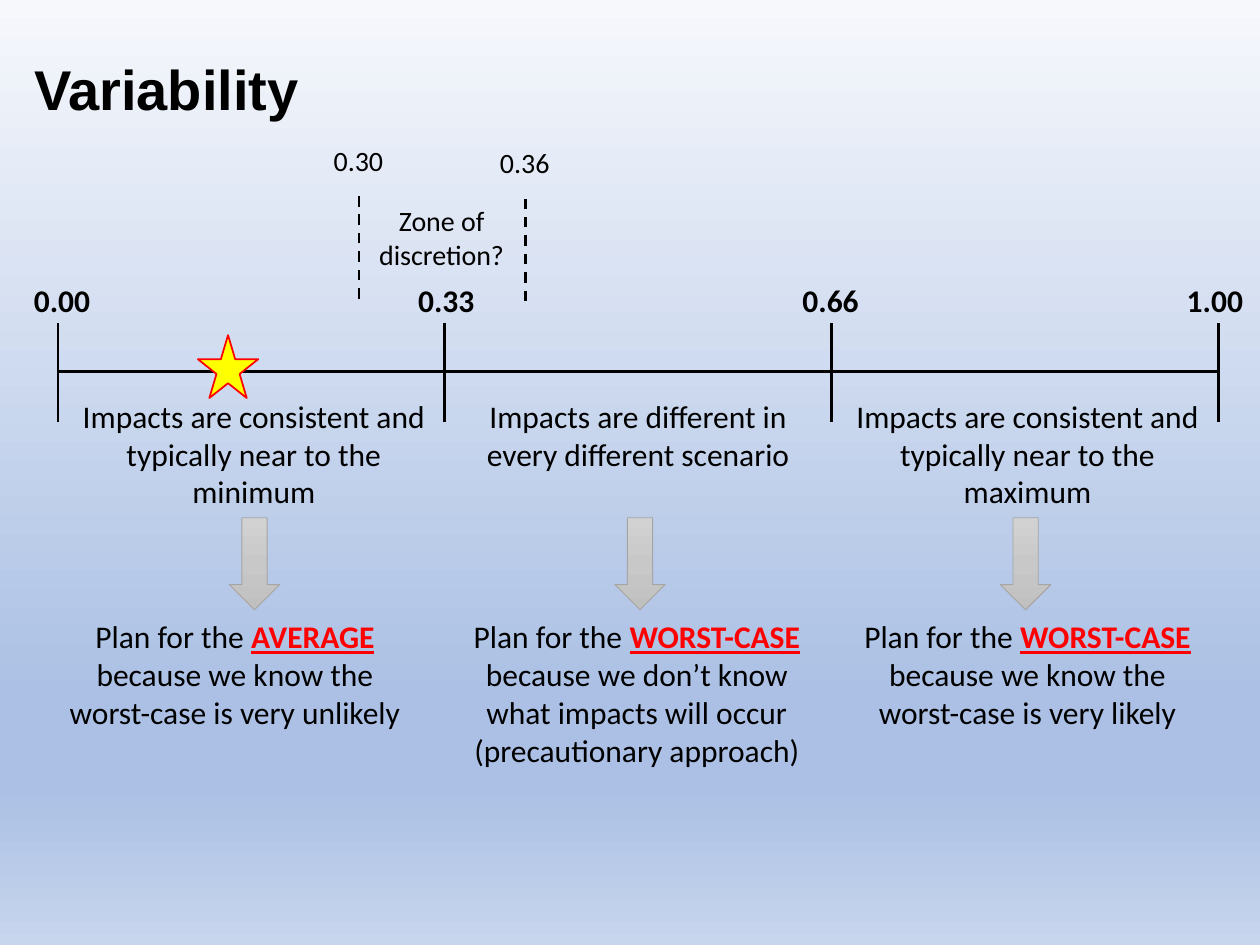
from lxml.etree import SubElement
from pptx import Presentation
from pptx.dml.color import RGBColor
from pptx.enum.dml import MSO_LINE
from pptx.enum.shapes import MSO_CONNECTOR, MSO_SHAPE
from pptx.enum.text import MSO_ANCHOR, PP_ALIGN
from pptx.oxml.ns import qn
from pptx.util import Inches, Pt

BLACK, RED, YELLOW, GREY = "000000", "FF0000", "FFFF00", "A5A5A5"
BACKGROUND = [(0, "F6F8FC"), (74, "ABC0E4"), (83, "ABC0E4"), (100, "C7D5ED")]
ARROW_FILL = [(0, "D2D2D2"), (50, "C8C8C8"), (100, "C0C0C0")]

# Content
TITLE = "Variability"
SCALE = ["0.00", "0.33", "0.66", "1.00"]
ZONE = "Zone of discretion?"
ZONE_LIMITS = [("0.30", 2.85, 1.09), ("0.36", 4.17, 1.11)]  # label, centre, top
# Each zone: impact and its left and width, plan paragraphs of (text, emphasis) and their left
ZONES = [
    ("Impacts are consistent and typically near to the minimum", 0.5, 3.03,
     [[("Plan for the ", False), ("AVERAGE", True),
       (" because we know the worst-case is very unlikely", False)]], 0.35),
    ("Impacts are different in every different scenario", 3.53, 3.07,
     [[("Plan for the ", False), ("WORST-CASE", True),
       (" because we don’t know what impacts will occur", False)],
      [("(precautionary approach)", False)]], 3.54),
    ("Impacts are consistent and typically near to the maximum", 6.64, 3.03,
     [[("Plan for the ", False), ("WORST-CASE", True),
       (" because we know the worst-case is very likely", False)]], 6.64),
]

# Scale geometry, in inches
AXIS_LEFT, AXIS_STEP, AXIS_Y = 0.46, 3.07, 2.95
TICK_TOP, TICK_BOTTOM = 2.56, 3.35
LABEL_LEFT, LABEL_STEP = 0.17, 3.05
ARROW_LEFT, ARROW_STEP = 1.82, 3.06


def rgb(value):
    return RGBColor.from_string(value)


def set_gradient(fill, element, stops):
    fill.gradient()
    fill.gradient_angle = 270
    stop_list = next(element.iter(qn("a:gsLst")))
    for old_stop in list(stop_list):
        stop_list.remove(old_stop)
    for position, color in stops:
        stop = SubElement(stop_list, qn("a:gs"), pos=str(position * 1000))
        SubElement(stop, qn("a:srgbClr"), val=color)


def format_run(run, size, name="Calibri", bold=False, color=BLACK):
    run.font.size, run.font.name, run.font.bold = Pt(size), name, bold
    run.font.color.rgb = rgb(color)


def add_text(slide, left, top, width, height, paragraphs, size=18,
             bold=False, align=PP_ALIGN.CENTER, wrap=True):
    box = slide.shapes.add_textbox(*map(Inches, (left, top, width, height)))
    frame = box.text_frame
    frame.word_wrap = wrap
    for index, parts in enumerate(paragraphs):
        paragraph = frame.add_paragraph() if index else frame.paragraphs[0]
        paragraph.alignment = align
        for text, emphasis in parts:
            run = paragraph.add_run()
            run.text = text
            format_run(run, size, bold=bold or emphasis, color=RED if emphasis else BLACK)
            run.font.underline = emphasis


def add_line(slide, x1, y1, x2, y2, dash=None):
    line = slide.shapes.add_connector(MSO_CONNECTOR.STRAIGHT,
                                      *map(Inches, (x1, y1, x2, y2)))
    line.line.color.rgb = rgb(BLACK)
    line.line.width = Pt(1.5)
    if dash:
        line.line.dash_style = dash
    SubElement(line._element.spPr, qn("a:effectLst"))


def add_shape(slide, kind, left, top, width, height, color, line_width):
    shape = slide.shapes.add_shape(kind, *map(Inches, (left, top, width, height)))
    shape.shadow.inherit = False
    shape.line.color.rgb = rgb(color)
    shape.line.width = Pt(line_width)
    return shape


def main():
    presentation = Presentation()
    presentation.slide_width, presentation.slide_height = Inches(10), Inches(7.5)
    slide = presentation.slides.add_slide(presentation.slide_layouts[5])
    set_gradient(slide.background.fill, slide._element, BACKGROUND)

    # Title
    title = slide.shapes.title
    title.left, title.top, title.width, title.height = map(Inches, (0.17, 0.38, 6.12, 0.64))
    title.text_frame.text = TITLE
    title.text_frame.vertical_anchor = MSO_ANCHOR.TOP
    paragraph = title.text_frame.paragraphs[0]
    paragraph.alignment = PP_ALIGN.LEFT
    format_run(paragraph.runs[0], 32, "Arial", bold=True)

    # Scale with its ticks and labels
    axis_right = AXIS_LEFT + AXIS_STEP * (len(SCALE) - 1)
    add_line(slide, AXIS_LEFT, AXIS_Y, axis_right, AXIS_Y)
    for index, label in enumerate(SCALE):
        tick_x = AXIS_LEFT + index * AXIS_STEP
        add_line(slide, tick_x, TICK_BOTTOM, tick_x, TICK_TOP)
        add_text(slide, LABEL_LEFT + index * LABEL_STEP, 2.18, 0.65, 0.4,
                 [[(label, False)]], bold=True, align=PP_ALIGN.LEFT, wrap=False)

    # Impact, arrow and plan of each zone
    for index, (impact, left, width, plan, plan_left) in enumerate(ZONES):
        add_text(slide, left, 3.1, width, 1.01, [[(impact, False)]])
        add_text(slide, plan_left, 4.85, 3.03, 1.01 + 0.3 * (len(plan) - 1), plan)
        arrow = add_shape(slide, MSO_SHAPE.DOWN_ARROW, ARROW_LEFT + index * ARROW_STEP,
                          4.11, 0.4, 0.73, GREY, 0.5)
        set_gradient(arrow.fill, arrow._element, ARROW_FILL)

    # Zone of discretion between its dashed limits
    for label, center, top in ZONE_LIMITS:
        add_line(slide, center, top + 1.28, center, top + 0.43, MSO_LINE.DASH)
        add_text(slide, center - 0.3, top, 0.6, 0.37, [[(label, False)]],
                 size=16, align=PP_ALIGN.LEFT, wrap=False)
    add_text(slide, 2.85, 1.57, 1.31, 0.64, [[(ZONE, False)]], size=16)

    # Marker on the scale
    star = add_shape(slide, MSO_SHAPE.STAR_5_POINT, 1.57, 2.66, 0.48, 0.5, RED, 1)
    star.fill.solid()
    star.fill.fore_color.rgb = rgb(YELLOW)

    presentation.save("out.pptx")


if __name__ == "__main__":
    main()
